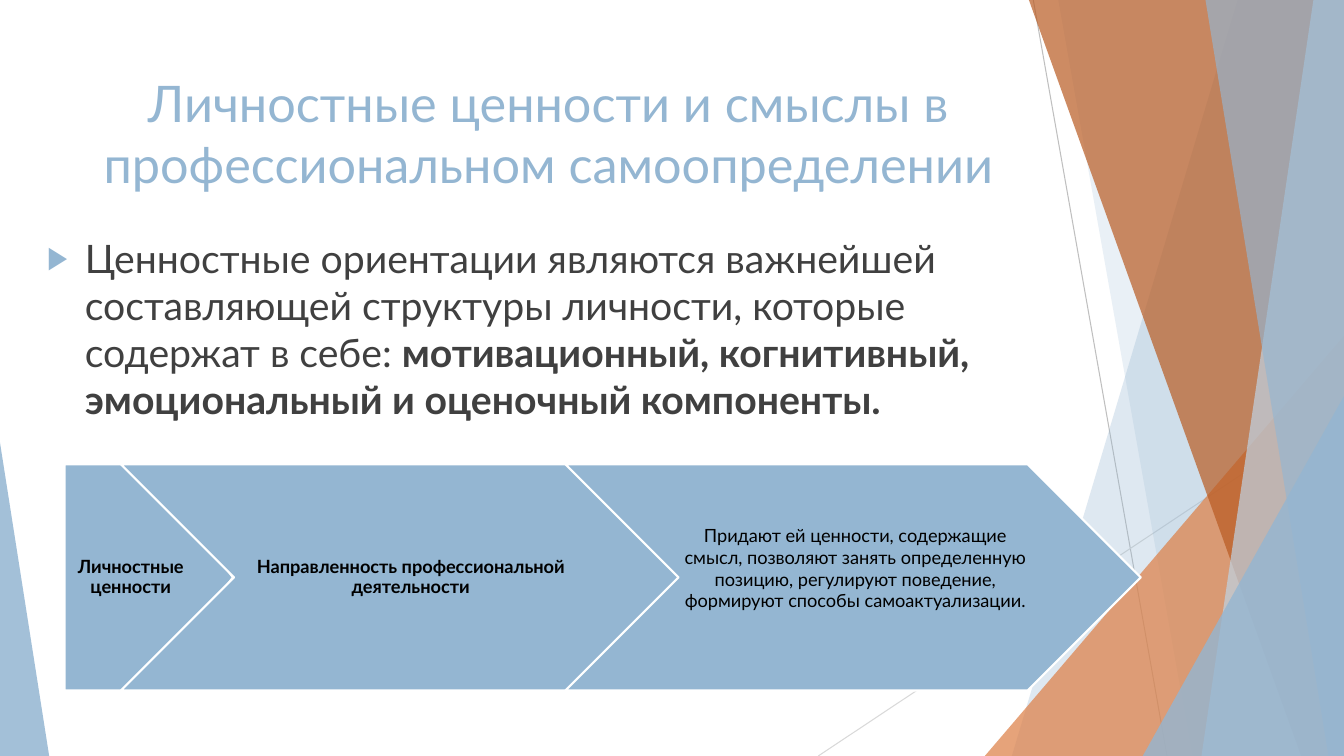
import pptx
import pptx.util
import pptx.dml.color
import pptx.enum.shapes
import pptx.enum.text
import pptx.oxml.ns
from lxml import etree

Cm, Pt = pptx.util.Cm, pptx.util.Pt
SHAPE = pptx.enum.shapes.MSO_SHAPE
ALIGN = pptx.enum.text.PP_ALIGN
ANCHOR = pptx.enum.text.MSO_ANCHOR
WIDE, HIGH = 33.87, 19.05
FONT = "Lato"
COLORS = {
    "blue": "94B6D2", "pale": "BFD3E4", "orange": "DD8047", "rust": "B95B22",
    "gray": "BFBFBF", "light": "D9D9D9", "dark": "404040",
    "black": "000000", "white": "FFFFFF",
}


def rgb(name):
    return pptx.dml.color.RGBColor.from_string(COLORS[name])


def add(parent, tag, **attrs):
    return etree.SubElement(parent, pptx.oxml.ns.qn(tag), attrs)


def paint(shape, color, alpha=100, edge=None):
    """Fill a shape, with opacity in percent and an optional outline."""
    shape.shadow.inherit = False
    shape.fill.solid()
    shape.fill.fore_color.rgb = rgb(color)
    if alpha < 100:
        tone = shape.fill._xPr.find(".//" + pptx.oxml.ns.qn("a:srgbClr"))
        add(tone, "a:alpha", val=str(alpha * 1000))
    if edge:
        shape.line.color.rgb = rgb(edge)
        shape.line.width = Pt(1.5)
    else:
        shape.line.fill.background()


def write(para, text, size, color, bold=False):
    run = para.add_run()
    run.text = text
    run.font.name = FONT
    run.font.size = Pt(size)
    run.font.bold = bold
    run.font.color.rgb = rgb(color)


def ray(slide, x1, y1, x2, y2, color):
    line = slide.shapes.add_connector(
        pptx.enum.shapes.MSO_CONNECTOR.STRAIGHT, Cm(x1), Cm(y1), Cm(x2), Cm(y2))
    line.line.color.rgb = rgb(color)
    line.line.width = Pt(0.75)
    add(line._element.spPr, "a:effectLst")


def shard(slide, top, base, color, alpha):
    """Draw a panel from a slanted left edge to the slide's right edge."""
    pen = slide.shapes.build_freeform(Cm(top), 0)
    pen.add_line_segments(
        [(Cm(WIDE), 0), (Cm(WIDE), Cm(HIGH)), (Cm(base), Cm(HIGH))])
    paint(pen.convert_to_shape(), color, alpha)


def wedge(slide, left, top, width, peak, color, alpha):
    """Draw a triangle that stands on the slide's bottom edge."""
    shape = slide.shapes.add_shape(
        SHAPE.ISOSCELES_TRIANGLE, Cm(left), Cm(top), Cm(width), Cm(HIGH - top))
    shape.adjustments[0] = peak
    paint(shape, color, alpha)


def decor(slide):
    ray(slide, 26.04, 0, 29.41, HIGH, "gray")
    ray(slide, WIDE, 10.24, 20.62, HIGH, "light")
    shard(slide, 31.19, 25.5, "blue", 30)
    shard(slide, 26.67, 30.05, "blue", 20)
    wedge(slide, 24.82, 8.46, WIDE - 24.82, 1, "orange", 72)
    shard(slide, 25.93, 32.79, "rust", 70)
    shard(slide, 33.1, 30.28, "pale", 70)
    shard(slide, 30.38, 33.48, "blue", 65)
    wedge(slide, 28.8, 9.98, WIDE - 28.8, 1, "blue", 80)
    wedge(slide, 0, 11.15, 1.24, 0, "blue", 85)


def head(slide, left, top, width, height):
    title = slide.shapes.title
    title.left, title.top = Cm(left), Cm(top)
    title.width, title.height = Cm(width), Cm(height)
    frame = title.text_frame
    frame.word_wrap = True
    frame.auto_size = pptx.enum.text.MSO_AUTO_SIZE.NONE
    frame.vertical_anchor = ANCHOR.TOP
    para = frame.paragraphs[0]
    para.alignment = ALIGN.CENTER
    para.line_spacing = 1.0
    write(para, "Личностные ценности и смыслы в профессиональном самоопределении",
          36, "blue")


def body(slide, left, top, width, height):
    box = slide.shapes.add_textbox(Cm(left), Cm(top), Cm(width), Cm(height))
    frame = box.text_frame
    frame.word_wrap = True
    para = frame.paragraphs[0]
    para.space_before = Pt(10)
    props = para._p.get_or_add_pPr()
    indent = Cm(0.95)
    props.set("marL", str(indent))
    props.set("indent", str(-indent))
    add(add(props, "a:buClr"), "a:srgbClr", val=COLORS["blue"])
    add(props, "a:buSzPct", val="80000")
    add(props, "a:buFont", typeface="Arial")
    add(props, "a:buChar", char="▶")
    write(para, "Ценностные ориентации являются важнейшей составляющей структуры "
          "личности, которые содержат в себе: ", 28, "dark")
    write(para, "мотивационный, когнитивный, эмоциональный и оценочный компоненты.",
          28, "dark", True)


def label(slide, left, top, width, height, text, bold, space, inset, foot):
    box = slide.shapes.add_textbox(Cm(left), Cm(top), Cm(width), Cm(height))
    frame = box.text_frame
    frame.word_wrap = True
    frame.vertical_anchor = ANCHOR.MIDDLE
    frame.margin_left, frame.margin_right = Cm(inset), Cm(0.05)
    frame.margin_top, frame.margin_bottom = Cm(0.1), Cm(foot)
    para = frame.paragraphs[0]
    para.alignment = ALIGN.CENTER
    para.line_spacing = space
    write(para, text, 13, "black", bold)


def flow(slide, left, top, height):
    """Draw the arrow chain; each point is half the height long."""
    point = height / 2
    wide = 14.5
    steps = [
        (SHAPE.PENTAGON, 0, 4.24, 0, 3.18, "Личностные ценности",
         True, 0.9, 0.2, 0.1),
        (SHAPE.CHEVRON, 1.42, wide, point, wide - height,
         "Направленность профессиональной деятельности", True, 0.9, 0.15, 0.1),
        (SHAPE.CHEVRON, 12.62, wide, point, wide - height,
         "Придают ей ценности, содержащие смысл, позволяют занять определенную "
         "позицию, регулируют поведение, формируют способы самоактуализации.",
         False, 1.0, 0.15, 0.58),
    ]
    for kind, shift, width, pad, room, *rest in steps:
        x = left + shift
        shape = slide.shapes.add_shape(kind, Cm(x), Cm(top), Cm(width), Cm(height))
        paint(shape, "blue", edge="white")
        label(slide, x + pad, top, room, height, *rest)


def main():
    deck = pptx.Presentation()
    deck.slide_width, deck.slide_height = Cm(WIDE), Cm(HIGH)
    slide = deck.slides.add_slide(deck.slide_layouts[5])
    decor(slide)
    head(slide, 1.88, 1.7, 23.88, 3.66)
    body(slide, 0.94, 5.77, 24.54, 11.66)
    flow(slide, 1.63, 11.7, 5.7)
    deck.save("out.pptx")


if __name__ == "__main__":
    main()
